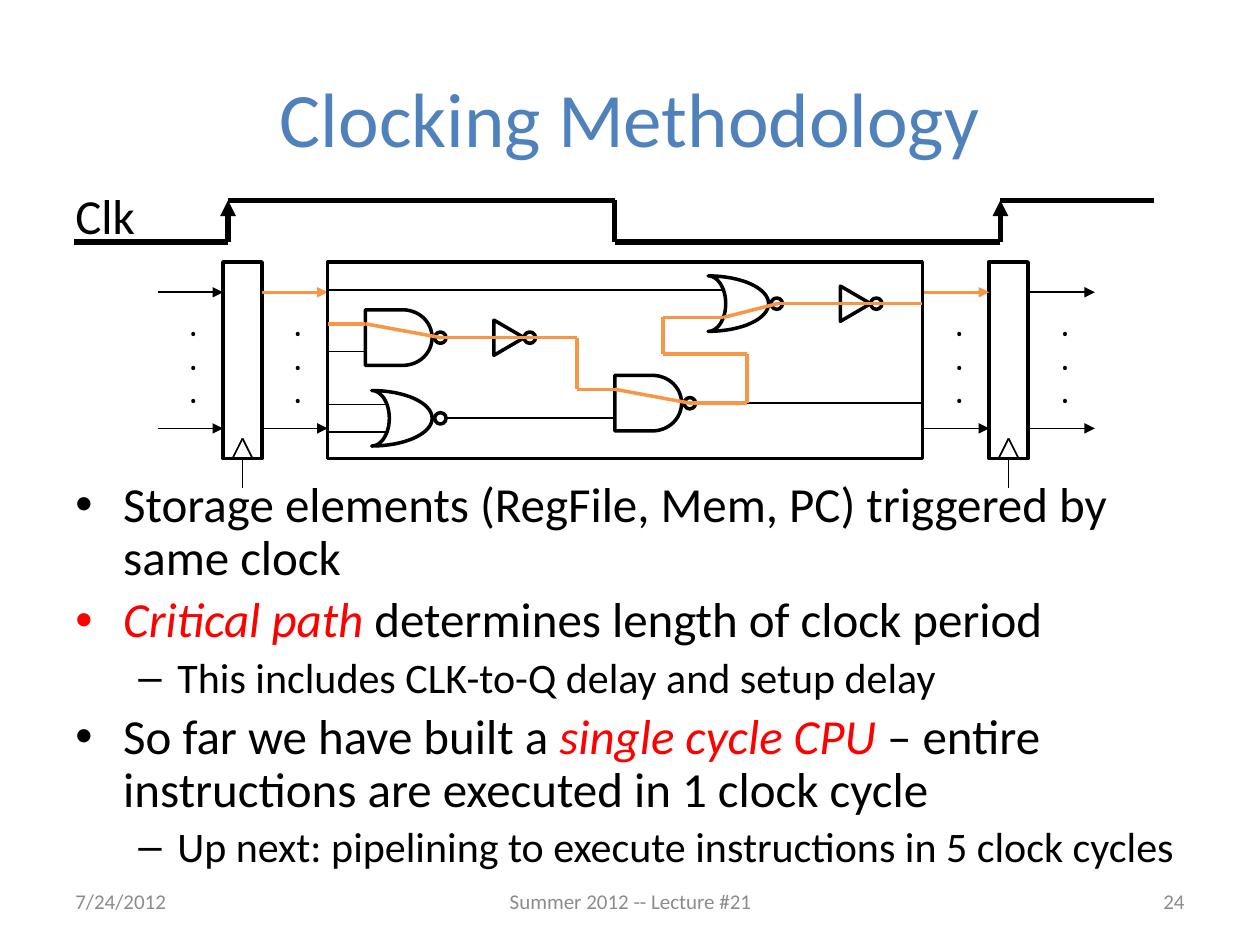
import itertools
import math

import pptx
import pptx.dml.color
import pptx.enum.shapes
import pptx.enum.text
import pptx.oxml.ns
import pptx.util
from lxml import etree
from pptx.util import Inches

BLACK, ORANGE, RED, BLUE, GREY = "000000", "F79646", "FF0000", "4F81BD", "8C8C8C"
ALIGN = pptx.enum.text.PP_ALIGN
ANCHOR = pptx.enum.text.MSO_ANCHOR
SHAPE = pptx.enum.shapes.MSO_SHAPE
BUBBLE = 0.09
INPUT_OFFSET = 0.11


def rgb(color):
    return pptx.dml.color.RGBColor.from_string(color)


def add_xml(parent, tag, **attributes):
    return etree.SubElement(parent, pptx.oxml.ns.qn(tag), attributes)


def style_run(run, size, color, font="Calibri", bold=False, italic=False):
    run.font.size = pptx.util.Pt(size)
    run.font.name = font
    run.font.bold = bold
    run.font.italic = italic
    run.font.color.rgb = rgb(color)


def add_label(slide, box, text, size, color, align=ALIGN.LEFT, anchor=ANCHOR.TOP,
              font="Calibri", bold=False, wrap=True):
    frame = slide.shapes.add_textbox(*map(Inches, box)).text_frame
    frame.text = text
    frame.word_wrap = wrap
    frame.vertical_anchor = anchor
    for paragraph in frame.paragraphs:
        paragraph.alignment = align
        for run in paragraph.runs:
            style_run(run, size, color, font, bold)


def add_wire(slide, start, end, color=BLACK, width=1, arrow=False):
    wire = slide.shapes.add_connector(pptx.enum.shapes.MSO_CONNECTOR.STRAIGHT,
                                      *map(Inches, (*start, *end)))
    wire.line.color.rgb = rgb(color)
    wire.line.width = pptx.util.Pt(width)
    if arrow:
        add_xml(wire.line._get_or_add_ln(), "a:tailEnd", type="triangle")
    add_xml(wire._element.spPr, "a:effectLst")


def add_trail(slide, points, **style):
    for start, end in itertools.pairwise(points):
        add_wire(slide, start, end, **style)


def style_outline(shape):
    shape.shadow.inherit = False
    shape.fill.background()
    shape.line.color.rgb = rgb(BLACK)
    shape.line.width = pptx.util.Pt(2)


def add_block(slide, box, kind=SHAPE.RECTANGLE):
    style_outline(slide.shapes.add_shape(kind, *map(Inches, box)))


def add_outline(slide, points):
    corners = [(Inches(x), Inches(y)) for x, y in points]
    builder = slide.shapes.build_freeform(*corners[0], scale=1.0)
    builder.add_line_segments(corners[1:], close=True)
    style_outline(builder.convert_to_shape())


def half_ellipse(x, y, width, height, steps=32):
    angles = [math.pi * (i / steps - 0.5) for i in range(steps + 1)]
    return [(x + width * math.cos(a), y + height / 2 * math.sin(a)) for a in angles]


def add_bubble(slide, x, y):
    add_block(slide, (x, y - BUBBLE / 2, BUBBLE, BUBBLE), SHAPE.OVAL)


def add_nand(slide, x, y):
    back = [(x, y + 0.22), (x, y - 0.22)]
    add_outline(slide, back + half_ellipse(x + 0.3, y, 0.23, 0.44))
    add_bubble(slide, x + 0.55, y)


def add_nor(slide, x, y):
    front = half_ellipse(x, y, 0.48, 0.44)
    back = half_ellipse(x, y, 0.14, 0.44)
    add_outline(slide, front + back[::-1])
    add_bubble(slide, x + 0.5, y)


def add_inverter(slide, x, y):
    add_outline(slide, [(x, y - 0.14), (x + 0.24, y), (x, y + 0.14)])
    add_bubble(slide, x + 0.24, y)


def add_title(slide, box):
    title = slide.shapes.title
    title.left, title.top, title.width, title.height = map(Inches, box)
    title.text_frame.text = "Clocking Methodology"
    title.text_frame.vertical_anchor = ANCHOR.MIDDLE
    paragraph = title.text_frame.paragraphs[0]
    paragraph.alignment = ALIGN.CENTER
    style_run(paragraph.runs[0], 44, BLUE)


def add_clock(slide, box):
    left, top, width, height = box
    low, right = top + height, left + width
    rise, fall, next_rise = left + 1.22, left + 4.29, left + 7.35
    add_trail(slide, [(left, low), (rise, low)], width=3)
    add_trail(slide, [(rise, top), (fall, top), (fall, low), (next_rise, low)], width=3)
    add_trail(slide, [(next_rise, top), (right, top)], width=3)
    for edge in (rise, next_rise):
        add_wire(slide, (edge, low), (edge, top), width=3, arrow=True)
    add_label(slide, (left - 0.09, top - 0.17, 0.69, 0.57), "Clk", 28, BLACK, wrap=False)


def add_register(slide, box):
    left, top, width, height = box
    middle, bottom = left + width / 2, top + height
    add_block(slide, box)
    add_trail(slide, [(middle - 0.08, bottom), (middle, bottom - 0.16), (middle + 0.08, bottom)])
    add_wire(slide, (middle, bottom), (middle, bottom + 0.23))


def add_bus(slide, box, critical):
    left, top, width, height = box
    first_style = {"color": ORANGE, "width": 2} if critical else {}
    add_wire(slide, (left, top), (left + width, top), arrow=True, **first_style)
    add_wire(slide, (left, top + height), (left + width, top + height), arrow=True)
    add_label(slide, (left + 0.16, top + 0.08, 0.25, 0.9), ".\n.\n.", 16, BLACK,
              font="Cambria", bold=True, wrap=False)


def add_logic(slide, box):
    left, top, width, height = box
    right = left + width
    add_block(slide, box)
    nands = [(left + 0.3, top + 0.6), (left + 2.28, top + 1.12)]
    nors = [(left + 0.35, top + 1.24), (left + 3.02, top + 0.33)]
    inverters = [(left + 1.32, top + 0.6), (left + 4.07, top + 0.33)]
    for add_gate, places in ((add_nand, nands), (add_nor, nors), (add_inverter, inverters)):
        for x, y in places:
            add_gate(slide, x, y)

    (nand_x, nand_y), (late_nand_x, late_nand_y) = nands
    (nor_x, nor_y), (late_nor_x, late_nor_y) = nors
    output_x = left + 3.33
    wires = [
        (left, late_nor_y - INPUT_OFFSET, late_nor_x + 0.12),
        (left, nand_y + INPUT_OFFSET, nand_x),
        (left, nor_y - INPUT_OFFSET, nor_x + 0.12),
        (left, nor_y + INPUT_OFFSET, nor_x + 0.12),
        (nor_x + 0.6, nor_y, late_nand_x),
        (output_x, late_nand_y, right),
    ]
    for start_x, y, end_x in wires:
        add_wire(slide, (start_x, y), (end_x, y))

    down_x, back_x, back_y = left + 1.98, left + 2.66, top + 0.73
    nand_in, late_nand_in = nand_y - INPUT_OFFSET, late_nand_y - INPUT_OFFSET
    late_nor_in = late_nor_y + INPUT_OFFSET
    critical_trail = [
        (left, nand_in), (nand_x, nand_in), (nand_x + 0.6, nand_y),
        (down_x, nand_y), (down_x, late_nand_in), (late_nand_x, late_nand_in),
        (late_nand_x + 0.6, late_nand_y), (output_x, late_nand_y),
        (output_x, back_y), (back_x, back_y), (back_x, late_nor_in),
        (late_nor_x + 0.12, late_nor_in), (late_nor_x + 0.55, late_nor_y), (right, late_nor_y),
    ]
    add_trail(slide, critical_trail, color=ORANGE, width=2)


def add_circuit(slide, box):
    left, top, width, height = box
    for register_x in (left + 0.52, left + 6.6):
        add_register(slide, (register_x, top, 0.31, height))
    for bus_x, critical in ((0, False), (0.83, True), (6.08, True), (6.92, False)):
        add_bus(slide, (left + bus_x, top + 0.24, 0.52, 1.08), critical)
    add_logic(slide, (left + 1.35, top, 4.72, height))


def add_points(slide, box):
    points = [
        (0, [("Storage elements (RegFile, Mem, PC) triggered by same clock", False)]),
        (0, [("Critical path", True), (" determines length of clock period", False)]),
        (1, [("This includes CLK-to-Q delay and setup delay", False)]),
        (0, [("So far we have built a ", False), ("single cycle CPU", True),
             (" – entire instructions are executed in 1 clock cycle", False)]),
        (1, [("Up next: pipelining to execute instructions in 5 clock cycles", False)]),
    ]
    levels = [(28, 0.38, 0.38, "•"), (24, 0.81, 0.31, "–")]
    frame = slide.shapes.add_textbox(*map(Inches, box)).text_frame
    frame.word_wrap = True
    for index, (level, pieces) in enumerate(points):
        size, margin, hanging, bullet = levels[level]
        paragraph = frame.add_paragraph() if index else frame.paragraphs[0]
        paragraph.level = level
        paragraph.line_spacing = 0.9
        paragraph.space_before = pptx.util.Pt(size * 0.2)
        properties = paragraph._p.get_or_add_pPr()
        properties.set("marL", str(Inches(margin)))
        properties.set("indent", str(-Inches(hanging)))
        add_xml(properties, "a:buFont", typeface="Arial")
        add_xml(properties, "a:buChar", char=bullet)
        for text, emphasised in pieces:
            run = paragraph.add_run()
            run.text = text
            style_run(run, size, RED if emphasised else BLACK, italic=emphasised)


def add_footer(slide, box):
    left, top, width, height = box
    parts = [
        (left, 2.33, "7/24/2012", ALIGN.LEFT),
        (left + 2.92, 3.17, "Summer 2012 -- Lecture #21", ALIGN.CENTER),
        (left + width - 2.33, 2.33, "24", ALIGN.RIGHT),
    ]
    for x, part_width, text, align in parts:
        add_label(slide, (x, top, part_width, height), text, 12, GREY, align, ANCHOR.MIDDLE)


def main():
    deck = pptx.Presentation()
    deck.slide_width, deck.slide_height = Inches(10), Inches(7.5)
    slide = deck.slides.add_slide(deck.slide_layouts[5])
    add_title(slide, (0.5, 0.3, 9, 1.25))
    add_points(slide, (0.5, 3.76, 9, 3.3))
    add_clock(slide, (0.59, 1.59, 8.57, 0.33))
    add_circuit(slide, (1.25, 2.08, 7.44, 1.56))
    add_footer(slide, (0.5, 6.95, 9, 0.4))
    deck.save("out.pptx")


if __name__ == "__main__":
    main()
